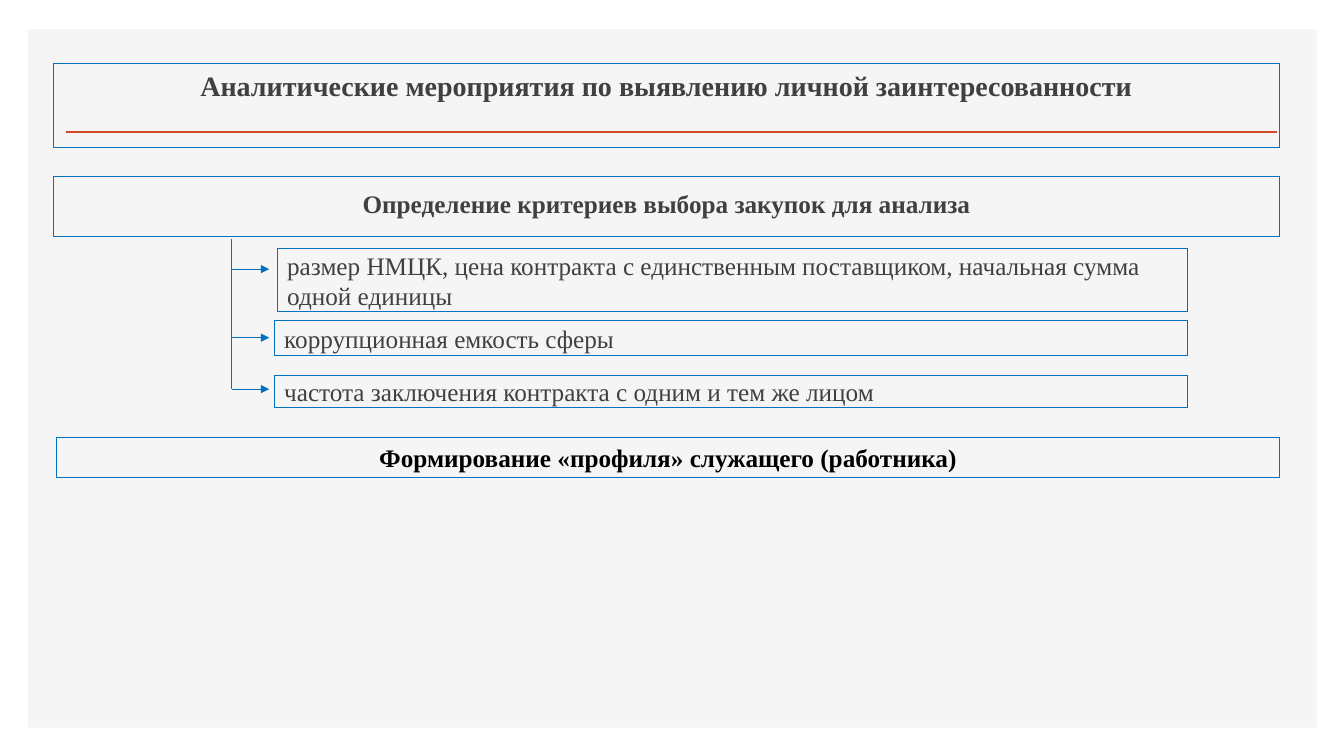
"""Build a slide on analysing procurement for signs of personal interest."""
from dataclasses import dataclass

from lxml import etree
from pptx import Presentation
from pptx.dml.color import RGBColor
from pptx.enum.shapes import MSO_CONNECTOR, MSO_SHAPE
from pptx.enum.text import MSO_ANCHOR, MSO_AUTO_SIZE, PP_ALIGN
from pptx.oxml.ns import qn
from pptx.shapes.autoshape import Shape
from pptx.slide import Slide
from pptx.util import Inches, Pt

RECTANGLE = MSO_SHAPE.RECTANGLE
STRAIGHT = MSO_CONNECTOR.STRAIGHT
TOP, MIDDLE = MSO_ANCHOR.TOP, MSO_ANCHOR.MIDDLE
LEFT, CENTER = PP_ALIGN.LEFT, PP_ALIGN.CENTER
FIXED, GROW = MSO_AUTO_SIZE.NONE, MSO_AUTO_SIZE.SHAPE_TO_FIT_TEXT

BLUE = RGBColor(0x00, 0x70, 0xC0)
ORANGE = RGBColor(0xD2, 0x47, 0x26)
PANEL_GRAY = RGBColor(0xF5, 0xF5, 0xF5)
TEXT_GRAY = RGBColor(0x40, 0x40, 0x40)
BLACK = RGBColor(0x00, 0x00, 0x00)

FONT = "Times New Roman"
SLIDE_WIDTH, SLIDE_HEIGHT = Inches(13.33), Inches(7.5)
TITLE_ONLY_LAYOUT = 5
TRUNK_X, TRUNK_TOP, ARROW_X = 17.25, 31.6, 20.03


@dataclass(frozen=True)
class Area:
    """A rectangle in percent of the slide's width and height."""
    left: float
    top: float
    width: float
    height: float


@dataclass(frozen=True)
class Box:
    """A framed text and its formatting."""
    text: str
    area: Area
    size: int = 18
    color: RGBColor = TEXT_GRAY
    bold: bool = True
    alignment: PP_ALIGN = CENTER
    anchor: MSO_ANCHOR = MIDDLE
    auto_size: MSO_AUTO_SIZE = FIXED
    line_spacing: float = 1.0


@dataclass(frozen=True)
class Criterion:
    """A selection criterion and the height of the arrow leading to it."""
    text: str
    area: Area
    arrow_y: float


PANEL = Area(2.1, 3.87, 95.87, 92.4)
TITLE = Box("Аналитические мероприятия по выявлению личной заинтересованности",
            Area(3.98, 8.4, 91.22, 5.87), size=20, anchor=TOP, auto_size=GROW)
HEADINGS = (
    Box("Определение критериев выбора закупок для анализа",
        Area(3.98, 23.33, 91.22, 8), line_spacing=0.8),
    Box("Формирование «профиля» служащего (работника)",
        Area(4.2, 57.87, 91, 5.33), color=BLACK, auto_size=GROW),
)
CRITERIA = (
    Criterion("размер НМЦК, цена контракта с единственным поставщиком, "
              "начальная сумма одной единицы",
              Area(20.63, 32.93, 67.74, 8.27), 35.6),
    Criterion("коррупционная емкость сферы",
              Area(20.41, 42.4, 67.97, 4.67), 44.67),
    Criterion("частота заключения контракта с одним и тем же лицом",
              Area(20.41, 49.73, 67.97, 4.13), 51.47),
)


def across(percent: float) -> int:
    """Turn a share of the slide's width into a length."""
    return round(SLIDE_WIDTH * percent / 100)


def down(percent: float) -> int:
    """Turn a share of the slide's height into a length."""
    return round(SLIDE_HEIGHT * percent / 100)


def add_rectangle(slide: Slide, area: Area) -> Shape:
    """Add a rectangle without a shadow."""
    shape = slide.shapes.add_shape(RECTANGLE, across(area.left), down(area.top),
                                   across(area.width), down(area.height))
    shape.shadow.inherit = False
    return shape


def format_box(shape: Shape, box: Box) -> None:
    """Frame a shape and write the text of the box into it."""
    shape.left, shape.top = across(box.area.left), down(box.area.top)
    shape.width, shape.height = across(box.area.width), down(box.area.height)
    shape.fill.background()
    shape.line.color.rgb = BLUE
    shape.line.width = Pt(0.75)
    frame = shape.text_frame
    frame.word_wrap = True
    frame.auto_size = box.auto_size
    frame.vertical_anchor = box.anchor
    paragraph = frame.paragraphs[0]
    paragraph.alignment = box.alignment
    paragraph.line_spacing = box.line_spacing
    run = paragraph.add_run()
    run.text = box.text
    run.font.name = FONT
    run.font.size = Pt(box.size)
    run.font.bold = box.bold
    run.font.color.rgb = box.color


def add_line(slide: Slide, start: tuple[float, float], end: tuple[float, float],
             color: RGBColor = BLUE, width: float = 0.75,
             arrow: bool = False) -> None:
    """Add a straight line, with an arrowhead at its end if asked."""
    connector = slide.shapes.add_connector(
        STRAIGHT, across(start[0]), down(start[1]), across(end[0]), down(end[1]))
    connector.line.color.rgb = color
    connector.line.width = Pt(width)
    if arrow:
        etree.SubElement(connector.line._get_or_add_ln(), qn("a:tailEnd"),
                         type="triangle")
    etree.SubElement(connector.element.spPr, qn("a:effectLst"))


def add_panel(slide: Slide) -> None:
    """Add the gray panel behind everything else."""
    panel = add_rectangle(slide, PANEL)
    panel.fill.solid()
    panel.fill.fore_color.rgb = PANEL_GRAY
    panel.line.fill.background()
    slide.shapes.element.insert(2, panel.element)


def main() -> None:
    """Build and save the presentation."""
    presentation = Presentation()
    presentation.slide_width, presentation.slide_height = SLIDE_WIDTH, SLIDE_HEIGHT
    slide = presentation.slides.add_slide(
        presentation.slide_layouts[TITLE_ONLY_LAYOUT])
    add_panel(slide)
    add_line(slide, (4.95, 17.47), (95.05, 17.47), ORANGE, 2)
    format_box(slide.shapes.title, TITLE)
    for heading in HEADINGS:
        format_box(add_rectangle(slide, heading.area), heading)
    for criterion in CRITERIA:
        box = Box(criterion.text, criterion.area, bold=False, alignment=LEFT)
        format_box(add_rectangle(slide, box.area), box)
        add_line(slide, (TRUNK_X, criterion.arrow_y),
                 (ARROW_X, criterion.arrow_y), arrow=True)
    add_line(slide, (TRUNK_X, TRUNK_TOP), (TRUNK_X, CRITERIA[-1].arrow_y))
    presentation.save("out.pptx")


if __name__ == "__main__":
    main()
